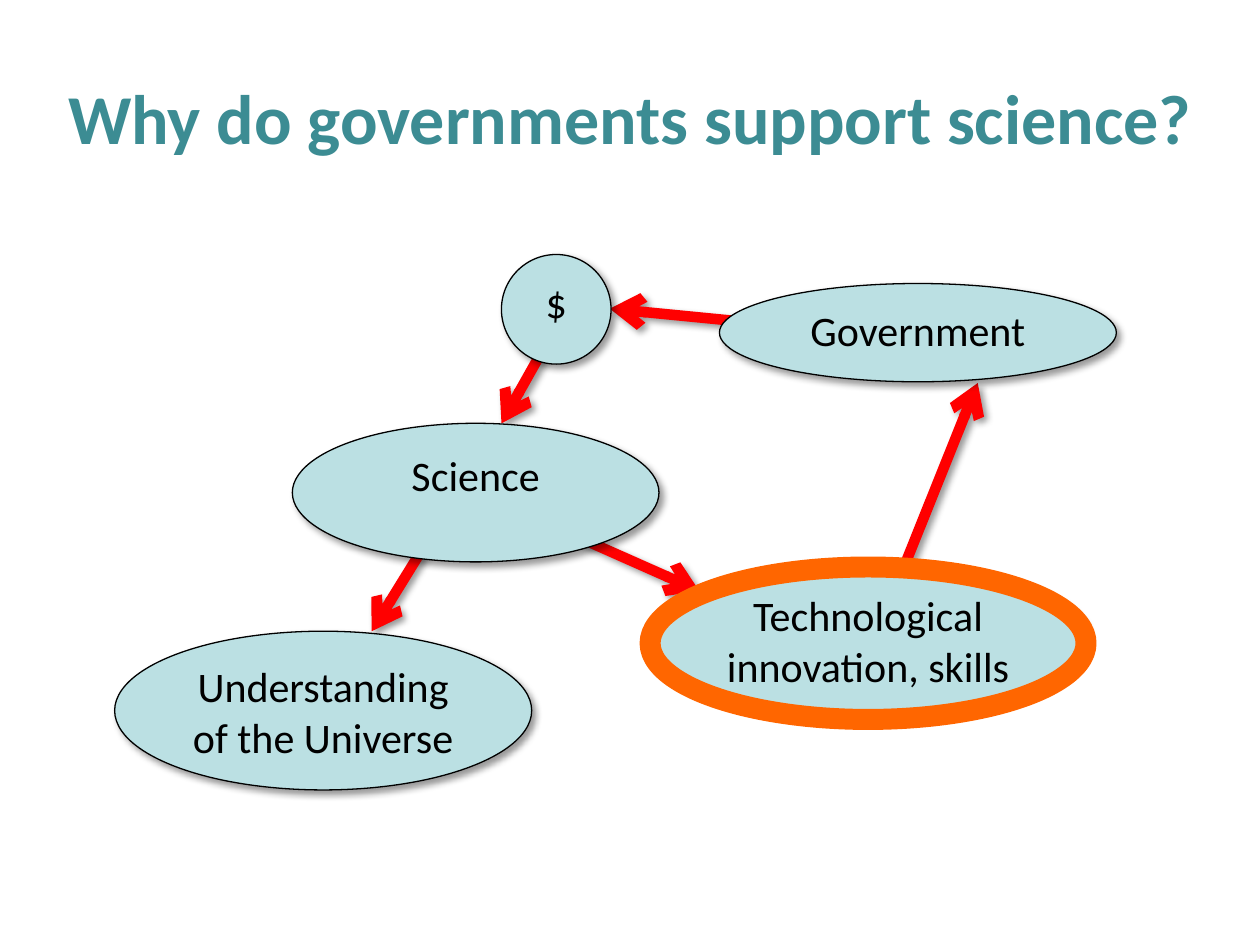
from pptx import Presentation
from pptx import util as u
from pptx.dml import color
from pptx.enum import shapes, text
from pptx.oxml import ns, parse_xml

FONT = "Calibri"
COLORS = {
    "title": "3C8C93",
    "node": "BBE0E3",
    "ink": "000000",
    "arrow": "FF0000",
    "highlight": "FF6600",
}

# left, top, width, height
NODES = {
    "Science": (2.32, 3.36, 2.91, 1.1),
    "Understanding of the Universe": (0.91, 5.01, 3.31, 1.26),
    "Technological innovation, skills": (5.16, 4.46, 3.46, 1.18),
    "$": (3.98, 2.02, 0.87, 0.87),
    "Government": (5.71, 2.25, 3.15, 0.78),
}
HIGHLIGHT = (5.16, 4.5, 3.46, 1.21)

# start x, start y, end x, end y
ARROWS = [
    (4.29, 2.81, 3.98, 3.36),  # $ to science
    (3.58, 3.99, 2.95, 5.01),  # science to understanding
    (4.13, 4.06, 5.55, 4.69),  # science to technology
    (6.97, 5.01, 7.76, 3.04),  # technology to government
    (6.89, 2.65, 4.84, 2.45),  # government to $
]


def rgb(name):
    return color.RGBColor.from_string(COLORS[name])


def inches(values):
    return [u.Inches(value) for value in values]


def set_line(line, name, width):
    line.color.rgb = rgb(name)
    line.width = u.Pt(width)


def add_shadow(element):
    """Give a shape or connector a soft shadow to the lower right."""
    element.spPr.append(parse_xml(
        f'<a:effectLst {ns.nsdecls("a")}>'
        f'<a:outerShdw blurRad="{u.Pt(4)}" dist="{u.Pt(3)}" dir="2700000" '
        'algn="ctr" rotWithShape="0">'
        f'<a:srgbClr val="{COLORS["ink"]}"><a:alpha val="40000"/></a:srgbClr>'
        '</a:outerShdw></a:effectLst>'))


def write(shape, words, *, size, name, bold=False, anchor=text.MSO_ANCHOR.TOP):
    frame = shape.text_frame
    frame.word_wrap = True
    frame.vertical_anchor = anchor
    frame.margin_left = frame.margin_right = u.Inches(0.05)
    para = frame.paragraphs[0]
    para.alignment = text.PP_ALIGN.CENTER
    span = para.add_run()
    span.text = words
    span.font.name = FONT
    span.font.size = u.Pt(size)
    span.font.bold = bold
    span.font.color.rgb = rgb(name)


def add_title(page, words):
    title = page.shapes.title
    title.left, title.top, title.width, title.height = inches((0, 0.39, 10, 1.07))
    write(title, words, size=40, name="title", bold=True,
          anchor=text.MSO_ANCHOR.MIDDLE)


def add_arrow(page, points):
    arrow = page.shapes.add_connector(shapes.MSO_CONNECTOR.STRAIGHT, *inches(points))
    set_line(arrow.line, "arrow", 6)
    arrow.line._get_or_add_ln().append(
        parse_xml(f'<a:tailEnd {ns.nsdecls("a")} type="arrow"/>'))
    add_shadow(arrow._element)


def add_ellipse(page, place, line_name, line_width):
    ellipse = page.shapes.add_shape(shapes.MSO_SHAPE.OVAL, *inches(place))
    set_line(ellipse.line, line_name, line_width)
    return ellipse


def add_node(page, words, place):
    node = add_ellipse(page, place, "ink", 0.75)
    node.fill.solid()
    node.fill.fore_color.rgb = rgb("node")
    add_shadow(node._element)
    write(node, words, size=24, name="ink")


def add_highlight(page, place):
    ring = add_ellipse(page, place, "highlight", 12)
    ring.fill.background()
    ring.shadow.inherit = False


def main():
    deck = Presentation()
    deck.slide_width, deck.slide_height = inches((10, 7.5))
    page = deck.slides.add_slide(deck.slide_layouts[5])

    add_title(page, "Why do governments support science?")

    # Arrows lie behind the ellipses
    for points in ARROWS:
        add_arrow(page, points)
    for words, place in NODES.items():
        add_node(page, words, place)

    # Ring around the technology node
    add_highlight(page, HIGHLIGHT)

    deck.save("out.pptx")


if __name__ == "__main__":
    main()
